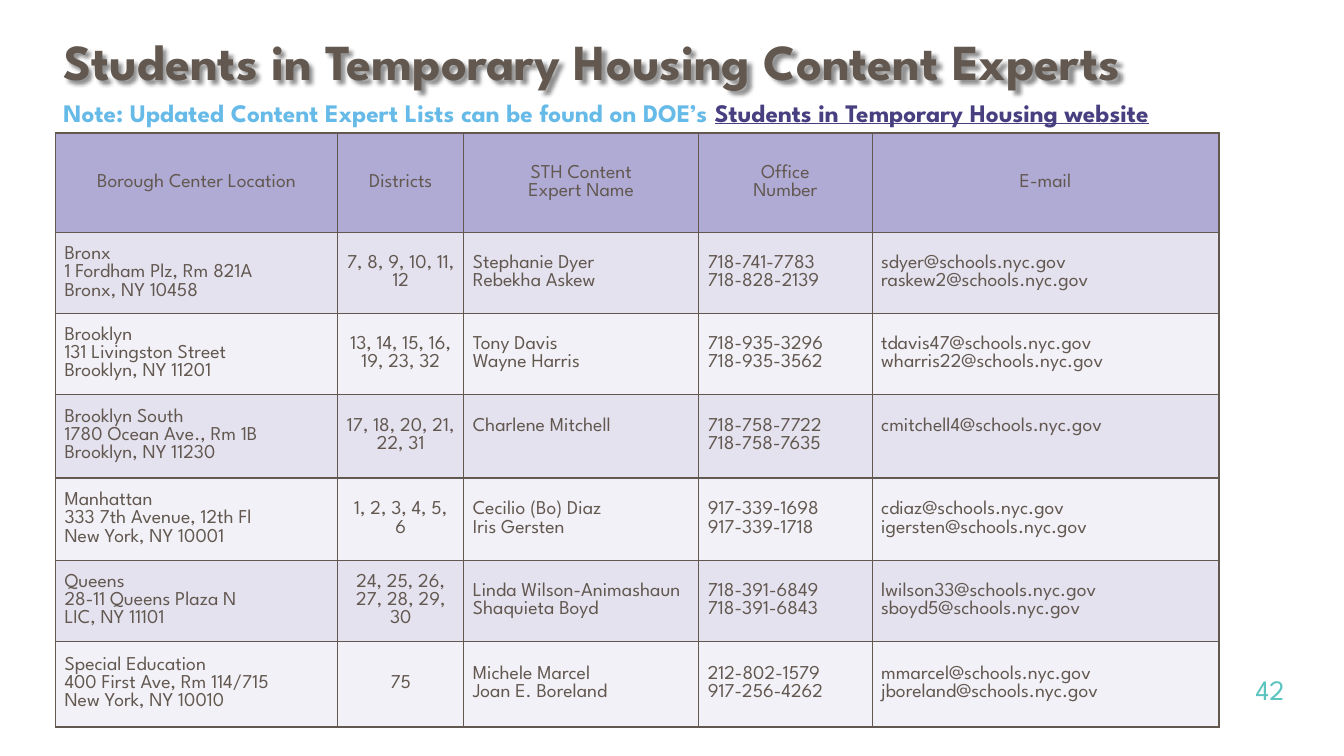
import lxml.etree
import pptx
import pptx.dml.color
import pptx.enum.text
import pptx.oxml.ns
import pptx.util

PX = 9144
FONT = "League Spartan"
BROWN = "625850"
ALIGN = pptx.enum.text.PP_ALIGN
ANCHOR = pptx.enum.text.MSO_ANCHOR

COLUMN_WIDTHS = [280, 125, 233, 172, 344]
ROW_HEIGHTS = [99, 77, 77, 83, 82, 77, 85]
BLANK_LINE = 18
MAIL_HOST = "@schools.nyc.gov"

HEADERS = ["Borough Center Location", "Districts", "STH Content\nExpert Name",
           "Office\nNumber", "E-mail"]
CENTERS = [
    ("Bronx\n1 Fordham Plz, Rm 821A\nBronx, NY 10458", "7, 8, 9, 10, 11, 12",
     "Stephanie Dyer\nRebekha Askew", "718-741-7783\n718-828-2139", ["sdyer", "raskew2"]),
    ("Brooklyn\n131 Livingston Street\nBrooklyn, NY 11201", "13, 14, 15, 16, 19, 23, 32",
     "Tony Davis\nWayne Harris", "718-935-3296\n718-935-3562", ["tdavis47", "wharris22"]),
    ("Brooklyn South\n1780 Ocean Ave., Rm 1B\nBrooklyn, NY 11230", "17, 18, 20, 21, 22, 31",
     "Charlene Mitchell", "718-758-7722\n718-758-7635", ["cmitchell4"]),
    ("Manhattan\n333 7th Avenue, 12th Fl\nNew York, NY 10001", "1, 2, 3, 4, 5, 6",
     "Cecilio (Bo) Diaz\nIris Gersten", "917-339-1698\n917-339-1718", ["cdiaz", "igersten"]),
    ("Queens\n28-11 Queens Plaza N\nLIC, NY 11101", "24, 25, 26, 27, 28, 29, 30",
     "Linda Wilson-Animashaun\nShaquieta Boyd", "718-391-6849\n718-391-6843",
     ["lwilson33", "sboyd5"]),
    ("Special Education\n400 First Ave, Rm 114/715\nNew York, NY 10010", "75",
     "Michele Marcel\nJoan E. Boreland", "212-802-1579\n917-256-4262",
     ["mmarcel", "jboreland"]),
]


def px(length):
    """Turn a length in px into EMU."""
    return pptx.util.Emu(length * PX)


def color(value):
    """Turn a hex string into a colour."""
    return pptx.dml.color.RGBColor.from_string(value)


def style_span(span, size, ink, bold=False, underline=False):
    """Format one run."""
    span.font.name = FONT
    span.font.size = pptx.util.Pt(size)
    span.font.color.rgb = color(ink)
    span.font.bold = bold
    span.font.underline = underline


def add_text(page, box, spans, anchor, align=ALIGN.LEFT, bottom=5):
    """Place one paragraph of (text, size, ink, bold, underline) spans in a box."""
    shape = page.shapes.add_textbox(*map(px, box))
    frame = shape.text_frame
    frame.word_wrap = True
    frame.vertical_anchor = anchor
    frame.margin_bottom = px(bottom)
    para = frame.paragraphs[0]
    para.alignment = align
    for text, *look in spans:
        span = para.add_run()
        span.text = text
        style_span(span, *look)
    return shape


def add_title(page, box):
    """Place the heading with its soft shadow."""
    title = add_text(page, box, [("Students in Temporary Housing Content Experts",
                                  36, BROWN, True)], ANCHOR.MIDDLE)
    qn = pptx.oxml.ns.qn
    effects = lxml.etree.SubElement(title._element.spPr, qn("a:effectLst"))
    shadow = lxml.etree.SubElement(effects, qn("a:outerShdw"), blurRad="38100",
                                   dist="38100", dir="2700000", algn="tl")
    shade = lxml.etree.SubElement(shadow, qn("a:srgbClr"), val="000000")
    lxml.etree.SubElement(shade, qn("a:alpha"), val="43000")


def add_note(page, box):
    """Place the note line at the foot of its box."""
    add_text(page, box, [
        ("Note: Updated Content Expert Lists can be found on DOE’s ", 18, "66BAE8", True),
        ("Students in Temporary Housing website", 18, "473F80", True, True),
    ], ANCHOR.BOTTOM)


def add_borders(cell):
    """Draw a thin line on all four sides of a cell."""
    qn = pptx.oxml.ns.qn
    properties = cell._tc.get_or_add_tcPr()
    for place, side in enumerate(("a:lnL", "a:lnR", "a:lnT", "a:lnB")):
        line = lxml.etree.Element(qn(side), w="12700")
        fill = lxml.etree.SubElement(line, qn("a:solidFill"))
        lxml.etree.SubElement(fill, qn("a:srgbClr"), val=BROWN)
        properties.insert(place, line)


def fill_cell(cell, text, fill, align, missing_lines):
    """Write and format one table cell."""
    cell.fill.solid()
    cell.fill.fore_color.rgb = color(fill)
    cell.vertical_anchor = ANCHOR.MIDDLE
    cell.margin_left = cell.margin_right = px(9)
    cell.margin_top = px(5)
    cell.margin_bottom = px(5 + missing_lines * BLANK_LINE)
    cell.text_frame.text = text
    for para in cell.text_frame.paragraphs:
        para.alignment = align
        for span in para.runs:
            style_span(span, 14, BROWN)
    add_borders(cell)


def add_experts(page, left, top):
    """Place the table of content experts."""
    rows = [HEADERS]
    for *facts, users in CENTERS:
        rows.append([*facts, "\n".join(user + MAIL_HOST for user in users)])
    table = page.shapes.add_table(
        len(rows), len(HEADERS), px(left), px(top),
        px(sum(COLUMN_WIDTHS)), px(sum(ROW_HEIGHTS))).table
    table.first_row = table.horz_banding = False
    for column, width in zip(table.columns, COLUMN_WIDTHS):
        column.width = px(width)
    for number, texts in enumerate(rows):
        table.rows[number].height = px(ROW_HEIGHTS[number])
        fill = "B0ABD5" if number == 0 else ("F2F1F7", "E4E2EF")[number % 2]
        for place, text in enumerate(texts):
            align = ALIGN.CENTER if number == 0 or place == 1 else ALIGN.LEFT
            missing = int(number > 0 and place in (2, 4) and "\n" not in text)
            fill_cell(table.cell(number, place), text, fill, align, missing)


def main():
    """Build the slide and save it."""
    deck = pptx.Presentation()
    deck.slide_width, deck.slide_height = px(1333), px(750)
    page = deck.slides.add_slide(deck.slide_layouts[6])
    add_text(page, (1168, 647, 116, 54), [("42", 20, "5BC4BE")],
             ANCHOR.BOTTOM, ALIGN.RIGHT, bottom=1)
    add_title(page, (53, 7, 1156, 106))
    add_experts(page, 55, 132)
    add_note(page, (53, 17, 1231, 114))
    deck.save("out.pptx")


if __name__ == "__main__":
    main()
